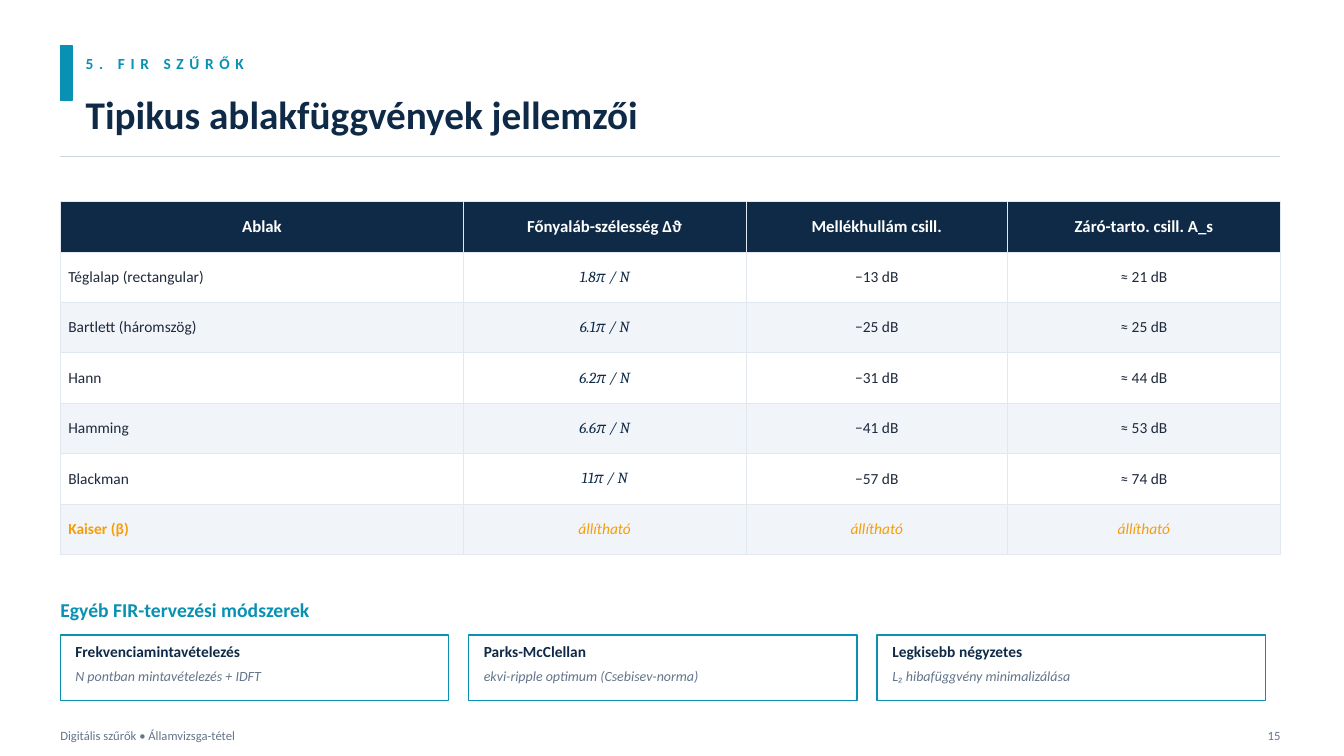
"""Build the slide on typical FIR window functions."""
import pptx
import pptx.dml.color
import pptx.enum.shapes
import pptx.enum.text
import pptx.oxml
import pptx.oxml.ns
import pptx.util

Cm = pptx.util.Cm
Pt = pptx.util.Pt
ALIGN = pptx.enum.text.PP_ALIGN
MIDDLE = pptx.enum.text.MSO_ANCHOR.MIDDLE
RECTANGLE = pptx.enum.shapes.MSO_SHAPE.RECTANGLE

NAVY, TEAL, SLATE, INK = "0F2A47", "0891B2", "64748B", "1E293B"
AMBER, WHITE, STRIPE, GRID, RULE = "F59E0B", "FFFFFF", "F1F5F9", "E2E8F0", "CBD5E1"
LEFT, WIDTH = 1.52, 30.73


def colour(hex_code):
    return pptx.dml.color.RGBColor.from_string(hex_code)


def write(frame, text, size=11, ink=INK, font="Calibri", bold=False, italic=False,
          align=ALIGN.LEFT, inset=0, spacing=None):
    frame.word_wrap = True
    frame.auto_size = pptx.enum.text.MSO_AUTO_SIZE.NONE
    frame.vertical_anchor = MIDDLE
    frame.margin_left = frame.margin_right = Cm(inset)
    frame.margin_top = frame.margin_bottom = Cm(inset)
    para = frame.paragraphs[0]
    para.alignment = align
    span = para.add_run()
    span.text = text
    span.font.size = Pt(size)
    span.font.name = font
    span.font.bold = bold
    span.font.italic = italic
    span.font.color.rgb = colour(ink)
    if spacing:
        span.font._element.set("spc", str(spacing * 100))


deck = pptx.Presentation()
deck.slide_width, deck.slide_height = Cm(33.86), Cm(19.05)
page = deck.slides.add_slide(deck.slide_layouts[5])

title = page.shapes.title
title.left, title.top, title.width, title.height = Cm(2.16), Cm(1.98), Cm(30.48), Cm(1.78)
write(title.text_frame, "Tipikus ablakfüggvények jellemzői", size=28, ink=NAVY, bold=True)

rule = page.shapes.add_connector(
    pptx.enum.shapes.MSO_CONNECTOR.STRAIGHT, Cm(LEFT), Cm(3.94), Cm(LEFT + WIDTH), Cm(3.94))
rule.line.color.rgb = colour(RULE)
rule.line.width = Pt(0.75)
rule._element.spPr.append(pptx.oxml.parse_xml(
    f"<a:effectLst {pptx.oxml.ns.nsdecls('a')}/>"))

rows = [
    ("Ablak", "Főnyaláb-szélesség Δϑ", "Mellékhullám csill.", "Záró-tarto. csill. A_s"),
    ("Téglalap (rectangular)", "1.8π / N", "−13 dB", "≈ 21 dB"),
    ("Bartlett (háromszög)", "6.1π / N", "−25 dB", "≈ 25 dB"),
    ("Hann", "6.2π / N", "−31 dB", "≈ 44 dB"),
    ("Hamming", "6.6π / N", "−41 dB", "≈ 53 dB"),
    ("Blackman", "11π / N", "−57 dB", "≈ 74 dB"),
    ("Kaiser (β)", "állítható", "állítható", "állítható"),
]
column_widths = [10.16, 7.11, 6.6, 6.86]
row_height = 1.27
table = page.shapes.add_table(
    len(rows), len(column_widths), Cm(LEFT), Cm(5.08), Cm(WIDTH), Cm(row_height * len(rows))).table
table.first_row = table.horz_banding = False
for column, width in zip(table.columns, column_widths):
    column.width = Cm(width)

for row_index, row in enumerate(rows):
    table.rows[row_index].height = Cm(row_height)
    for column_index, text in enumerate(row):
        style = {"align": ALIGN.CENTER if column_index else ALIGN.LEFT}
        fill = WHITE if row_index % 2 else STRIPE
        if row_index == 0:
            fill = NAVY
            style = {"size": 12, "ink": WHITE, "bold": True, "align": ALIGN.CENTER}
        elif row_index == len(rows) - 1:
            style.update(ink=AMBER, bold=column_index == 0, italic=column_index > 0)
        elif column_index == 1:
            style.update(ink=NAVY, font="Cambria", italic=True)

        cell = table.cell(row_index, column_index)
        write(cell.text_frame, text, **style)
        cell.vertical_anchor = MIDDLE
        cell.margin_left = cell.margin_right = Cm(0.2)
        cell.margin_top = cell.margin_bottom = Cm(0.2)
        properties = cell._tc.get_or_add_tcPr()
        for side in "LRTB":
            properties.append(pptx.oxml.parse_xml(
                f'<a:ln{side} {pptx.oxml.ns.nsdecls("a")} w="{Pt(0.5)}"><a:solidFill>'
                f'<a:srgbClr val="{GRID}"/></a:solidFill></a:ln{side}>'))
        cell.fill.solid()
        cell.fill.fore_color.rgb = colour(fill)

methods = [
    ("Frekvenciamintavételezés", "N pontban mintavételezés + IDFT"),
    ("Parks-McClellan", "ekvi-ripple optimum (Csebisev-norma)"),
    ("Legkisebb négyzetes", "L₂ hibafüggvény minimalizálása"),
]
footer = {"size": 9, "ink": SLATE}
panels = [(LEFT, 1.14, 0.3, 1.4, TEAL)]
labels = [
    (2.16, 1.14, 20.32, 0.89, "5. FIR SZŰRŐK", {"ink": TEAL, "bold": True, "spacing": 4}),
    (LEFT, 14.86, WIDTH, 1.02, "Egyéb FIR-tervezési módszerek",
     {"size": 14, "ink": TEAL, "bold": True}),
    (LEFT, 18.16, 20.32, 0.76, "Digitális szűrők • Államvizsga-tétel", footer),
    (31.5, 18.16, 0.76, 0.76, "15", {**footer, "align": ALIGN.RIGHT}),
]
for index, (name, detail) in enumerate(methods):
    card_left = LEFT + index * 10.29
    panels.append((card_left, 16, 9.78, 1.65, WHITE))
    labels.append((card_left + 0.38, 16, 9.27, 0.81, name, {"ink": NAVY, "bold": True}))
    labels.append((card_left + 0.38, 16.64, 9.27, 0.81, detail,
                   {"size": 10, "ink": SLATE, "italic": True}))

for left, top, width, height, fill in panels:
    panel = page.shapes.add_shape(RECTANGLE, Cm(left), Cm(top), Cm(width), Cm(height))
    panel.shadow.inherit = False
    panel.fill.solid()
    panel.fill.fore_color.rgb = colour(fill)
    panel.line.color.rgb = colour(TEAL)
    panel.line.width = Pt(1)

for left, top, width, height, text, style in labels:
    box = page.shapes.add_textbox(Cm(left), Cm(top), Cm(width), Cm(height))
    write(box.text_frame, text, **style)

deck.save("out.pptx")
